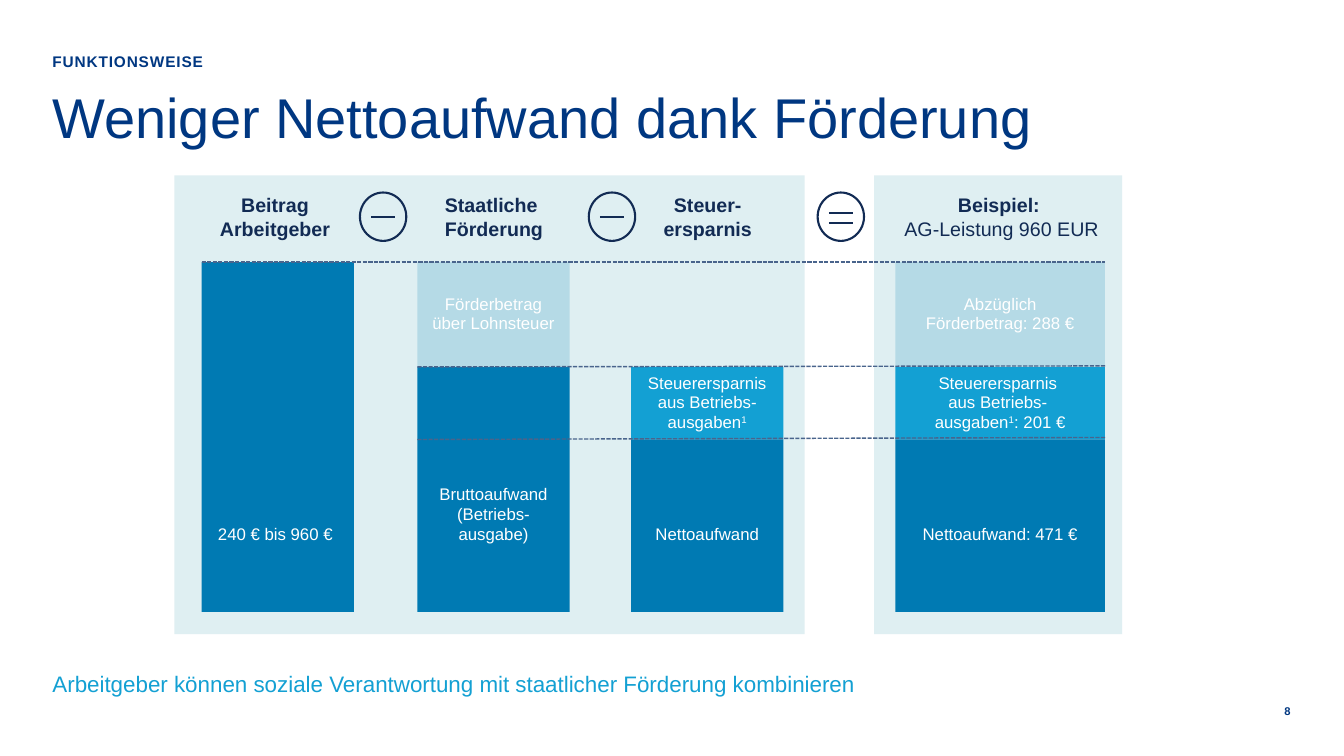
from dataclasses import dataclass

from lxml.etree import SubElement
from pptx import Presentation
from pptx.dml.color import RGBColor
from pptx.enum.dml import MSO_LINE
from pptx.enum.shapes import MSO_CONNECTOR, MSO_SHAPE
from pptx.enum.text import MSO_ANCHOR, PP_ALIGN
from pptx.oxml.ns import qn
from pptx.util import Inches, Pt


@dataclass(frozen=True)
class Theme:
    """Colours, font and type sizes of the slide."""
    face: str = "Arial"
    navy: str = "003781"
    ink: str = "122B54"
    blue: str = "007AB3"
    cyan: str = "13A0D3"
    pale: str = "B5DAE6"
    panel: str = "DFEFF2"
    dash: str = "49648C"
    white: str = "FFFFFF"
    title: int = 40
    lead: int = 16
    head: int = 14
    label: int = 12
    kicker: int = 11
    page: int = 8


class Board:
    """Draws styled elements on one slide."""

    def __init__(self, slide, theme):
        self.shapes = slide.shapes
        self.theme = theme

    def apply(self, item, vals):
        """Set attributes from a dict of format values."""
        for key, val in vals.items():
            setattr(item, key, val)

    def letter(self, shape, paras, size, color, bold=False, align=PP_ALIGN.LEFT,
               anchor=MSO_ANCHOR.TOP, pad=(0, 0, 0, 0), space=None, track=0):
        """Fill a shape with paragraphs of (text, format) runs."""
        frame = shape.text_frame
        sides = ("margin_left", "margin_top", "margin_right", "margin_bottom")
        self.apply(frame, {"word_wrap": True, "vertical_anchor": anchor})
        self.apply(frame, dict(zip(sides, map(Inches, pad))))
        for spot, runs in enumerate(paras):
            para = frame.add_paragraph() if spot else frame.paragraphs[0]
            self.apply(para, {"alignment": align, "line_spacing": space})
            for text, form in runs:
                for row, part in enumerate(text.split("\n")):
                    if row:
                        para.add_line_break()
                    if not part:
                        continue
                    run = para.add_run()
                    run.text = part
                    self.apply(run.font, {"name": self.theme.face, "size": Pt(size),
                                          "bold": form.get("bold", bold)})
                    run.font.color.rgb = RGBColor.from_string(color)
                    props = run._r.get_or_add_rPr()
                    if track:
                        props.set("spc", str(track))
                    if "raise" in form:
                        props.set("baseline", str(form["raise"]))

    def text(self, box, paras, size, color, **form):
        """Add a text box."""
        shape = self.shapes.add_textbox(*map(Inches, box))
        self.letter(shape, paras, size, color, **form)

    def head(self, left, width, paras):
        """Add a centred column heading."""
        self.text((left, 1.83, width, 0.64), paras, self.theme.head, self.theme.ink,
                  bold=True, align=PP_ALIGN.CENTER, anchor=MSO_ANCHOR.MIDDLE,
                  pad=(0.1, 0.05, 0.1, 0.05))

    def rect(self, box, color):
        """Add a plain filled rectangle."""
        shape = self.shapes.add_shape(MSO_SHAPE.RECTANGLE, *map(Inches, box))
        shape.shadow.inherit = False
        shape.fill.solid()
        shape.fill.fore_color.rgb = RGBColor.from_string(color)
        shape.line.fill.background()
        return shape

    def bar(self, left, width, top, foot, color, paras):
        """Add a labelled bar segment."""
        shape = self.rect((left, top, width, foot - top), color)
        base = color == self.theme.blue
        self.letter(shape, paras, self.theme.label, self.theme.white,
                    align=PP_ALIGN.CENTER,
                    anchor=MSO_ANCHOR.BOTTOM if base else MSO_ANCHOR.MIDDLE,
                    pad=(0.1, 0.05, 0.1, 0.67 if base else 0.05),
                    space=None if base else 0.95)

    def line(self, ends, color, width, dash=None):
        """Add a straight line."""
        link = self.shapes.add_connector(MSO_CONNECTOR.STRAIGHT, *map(Inches, ends))
        link.line.color.rgb = RGBColor.from_string(color)
        self.apply(link.line, {"width": Pt(width), "dash_style": dash})
        SubElement(link._element.spPr, qn("a:effectLst"))

    def sign(self, left, rows):
        """Add a ringed minus or equals sign."""
        ring = self.shapes.add_shape(
            MSO_SHAPE.OVAL, *map(Inches, (left, 1.91, 0.46, 0.48)))
        ring.shadow.inherit = False
        ring.fill.background()
        ring.line.color.rgb = RGBColor.from_string(self.theme.ink)
        ring.line.width = Pt(1.5)
        for row in rows:
            self.line((left + 0.11, row, left + 0.35, row), self.theme.ink, 1.5)


def plain(*texts):
    """Turn texts into unformatted paragraphs."""
    return [[(text, {})] for text in texts]


def main():
    """Build and save the slide."""
    deck = Presentation()
    deck.slide_width, deck.slide_height = Inches(13.33), Inches(7.5)
    look = Theme()
    board = Board(deck.slides.add_slide(deck.slide_layouts[6]), look)

    board.text((0.52, 0.96, 11.62, 1.02), plain("Weniger Nettoaufwand dank Förderung"),
               look.title, look.navy, space=Pt(38))
    board.text((0.52, 0.52, 10.2, 0.28), plain("FUNKTIONSWEISE"),
               look.kicker, look.navy, bold=True, track=60)
    board.text((12.51, 6.97, 0.29, 0.16), plain("8"), look.page, look.navy, bold=True,
               align=PP_ALIGN.RIGHT, anchor=MSO_ANCHOR.MIDDLE, space=Pt(10))
    board.text((0.52, 6.62, 12.28, 0.32), plain(
        "Arbeitgeber können soziale Verantwortung mit staatlicher Förderung kombinieren"),
        look.lead, look.cyan, anchor=MSO_ANCHOR.MIDDLE)

    for left, width in ((8.67, 2.46), (1.73, 6.25)):
        board.rect((left, 1.74, width, 4.55), look.panel)

    heads = (
        (1.54, 2.43, plain("Beitrag \nArbeitgeber ")),
        (3.62, 2.56, plain("Staatliche \nFörderung")),
        (5.87, 2.3, plain("Steuer-\nersparnis")),
        (8.75, 2.37, [[("Beispiel: \n", {}), ("AG-Leistung 960 EUR", {"bold": False})]]),
    )
    for head in heads:
        board.head(*head)

    top, mid, low, foot = 2.6, 3.64, 4.36, 6.07
    first, second, third, last = (2, 1.51), (4.14, 1.51), (6.26, 1.51), (8.88, 2.08)
    note = ("1", {"raise": 30000})
    bars = (
        (*first, top, foot, look.blue, plain("240 € bis 960 € ")),
        (*second, mid, foot, look.blue, plain("Bruttoaufwand", "(Betriebs-\nausgabe)")),
        (*second, top, mid, look.pale, plain("Förderbetrag über Lohnsteuer")),
        (*third, mid, low, look.cyan,
         [[("Steuerersparnis aus Betriebs-\nausgaben", {}), note]]),
        (*third, low, foot, look.blue, plain("Nettoaufwand")),
        (*last, mid, low, look.cyan,
         [[("Steuerersparnis \naus Betriebs- \nausgaben", {}), note, (": 201 €", {})]]),
        (*last, low, foot, look.blue, plain("Nettoaufwand: 471 €")),
        (*last, top, mid, look.pale, plain("Abzüglich\nFörderbetrag: 288 €")),
    )
    for bar in bars:
        board.bar(*bar)

    for left, start, end in ((2, top, top), (4.14, mid, 3.63), (4.14, low, 4.34)):
        board.line((left, start, 10.96, end), look.dash, 1, MSO_LINE.SQUARE_DOT)

    for spot, rows in enumerate(((2.15,), (2.15,), (2.11, 2.21))):
        board.sign(3.57 + 2.27 * spot, rows)

    deck.save("out.pptx")


if __name__ == "__main__":
    main()
